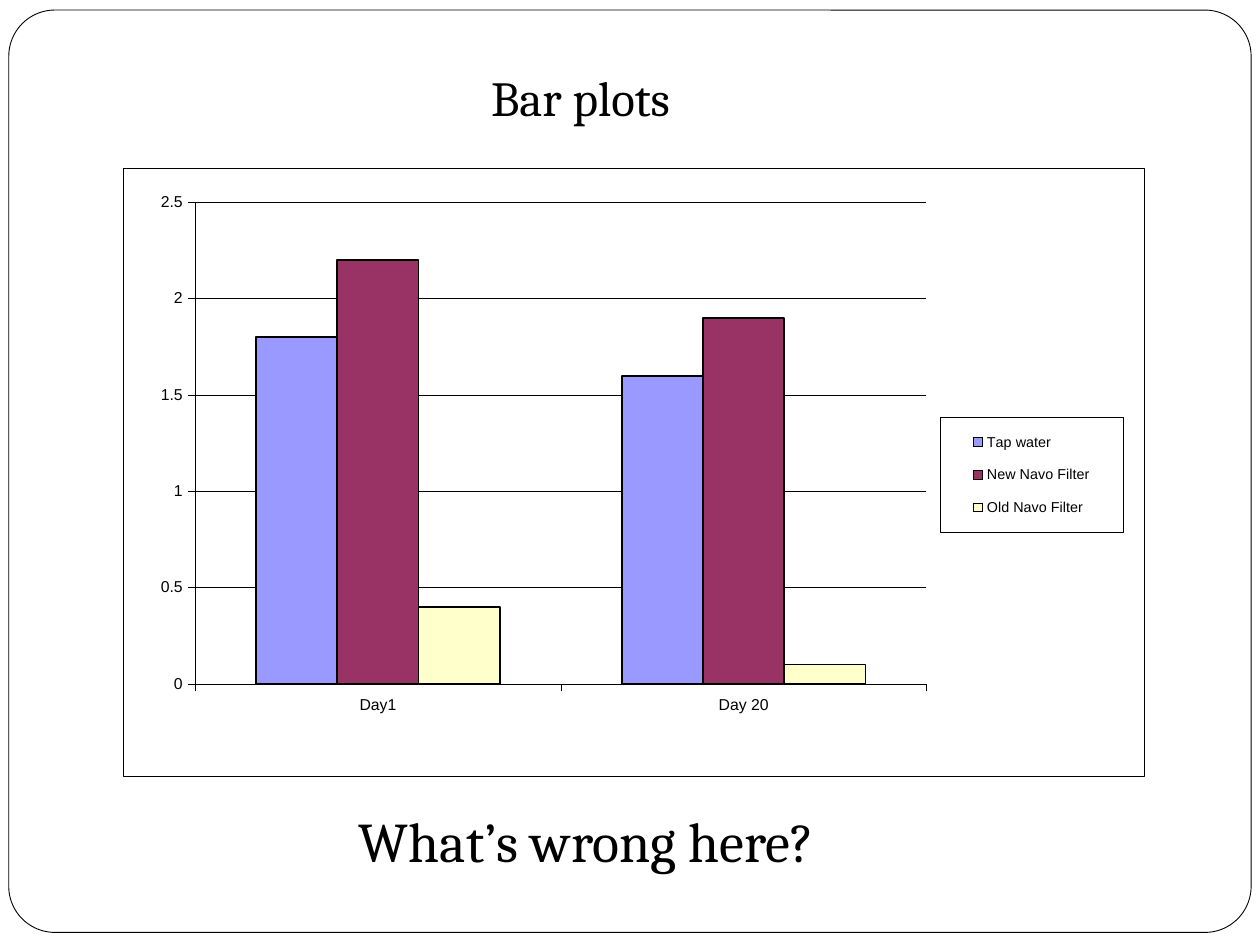
from lxml import etree
from pptx import Presentation
from pptx import util as u
from pptx.chart.data import CategoryChartData
from pptx.dml.color import RGBColor
from pptx.enum import chart as ch, shapes, text
from pptx.oxml import parse_xml
from pptx.oxml.ns import nsdecls, qn

COLORS = {
    "ink": "000000",
    "paper": "FFFFFF",
    "tap": "9999FF",
    "new": "993366",
    "old": "FFFFCC",
}
DAYS = ["Day1", "Day 20"]
WATERS = [
    ("Tap water", (1.8, 1.6), "tap"),
    ("New Navo Filter", (2.2, 1.9), "new"),
    ("Old Navo Filter", (0.4, 0.1), "old"),
]


def rgb(name):
    return RGBColor.from_string(COLORS[name])


def inches(box):
    return [u.Inches(length) for length in box]


def set_line(line, width):
    line.color.rgb = rgb("ink")
    line.width = u.Pt(width)


def set_font(font, size, name):
    font.size = u.Pt(size)
    font.name = name
    font.color.rgb = rgb("ink")


def add_text(slide, box, words, size, font="Cambria"):
    frame = slide.shapes.add_textbox(*inches(box)).text_frame
    frame.word_wrap = True
    frame.auto_size = text.MSO_AUTO_SIZE.SHAPE_TO_FIT_TEXT
    run = frame.paragraphs[0].add_run()
    run.text = words
    set_font(run.font, size, font)


def add_frame(slide, box):
    frame = slide.shapes.add_shape(
        shapes.MSO_SHAPE.ROUNDED_RECTANGLE, *inches(box))
    frame.shadow.inherit = False
    frame.adjustments[0] = 0.05
    frame.fill.solid()
    frame.fill.fore_color.rgb = rgb("paper")
    set_line(frame.line, 0.5)


def manual_layout(x, y, w, h, inner=False):
    """Return a c:layout element with fractions of the chart area."""
    layout = parse_xml(f"<c:layout {nsdecls('c')}><c:manualLayout/></c:layout>")
    settings = [("layoutTarget", "inner")] if inner else []
    settings += [("xMode", "edge"), ("yMode", "edge"),
                 ("x", x), ("y", y), ("w", w), ("h", h)]
    for tag, value in settings:
        etree.SubElement(layout[0], qn(f"c:{tag}")).set("val", str(value))
    return layout


def paper_box():
    """Return a c:spPr element with a white fill and a hairline border."""
    return parse_xml(
        f"<c:spPr {nsdecls('c', 'a')}>"
        f"<a:solidFill><a:srgbClr val='{COLORS['paper']}'/></a:solidFill>"
        f"<a:ln w='{u.Pt(0.25)}'><a:solidFill>"
        f"<a:srgbClr val='{COLORS['ink']}'/></a:solidFill></a:ln></c:spPr>")


def style_axes(chart):
    for axis in (chart.category_axis, chart.value_axis):
        axis.major_tick_mark = ch.XL_TICK_MARK.OUTSIDE
        axis.minor_tick_mark = ch.XL_TICK_MARK.NONE
        set_font(axis.tick_labels.font, 9, "Arial")
        set_line(axis.format.line, 0.25)
    chart.category_axis.tick_label_position = ch.XL_TICK_LABEL_POSITION.LOW
    values = chart.value_axis
    values.minimum_scale, values.maximum_scale, values.major_unit = 0, 2.5, 0.5
    values.has_major_gridlines = True
    set_line(values.major_gridlines.format.line, 0.25)
    values.tick_labels.number_format = "General"
    values.tick_labels.number_format_is_linked = False


def style_legend(chart):
    chart.has_legend = True
    legend = chart.legend
    legend.position = ch.XL_LEGEND_POSITION.RIGHT
    legend.include_in_layout = False
    set_font(legend.font, 8.2, "Arial")
    overlay = legend._element.find(qn("c:overlay"))
    for old in legend._element.findall(qn("c:layout")):
        legend._element.remove(old)
    overlay.addprevious(manual_layout(0.8, 0.41, 0.18, 0.19))
    overlay.addnext(paper_box())


def add_water_chart(slide, box):
    data = CategoryChartData()
    data.categories = DAYS
    for name, values, _ in WATERS:
        data.add_series(name, values)
    chart = slide.shapes.add_chart(
        ch.XL_CHART_TYPE.COLUMN_CLUSTERED, *inches(box), data).chart
    chart.has_title = False
    set_font(chart.font, 9, "Arial")

    plot = chart.plots[0]
    plot.gap_width, plot.overlap = 150, 0
    plot.vary_by_categories = False
    for series, (_, _, color) in zip(plot.series, WATERS):
        series.format.fill.solid()
        series.format.fill.fore_color.rgb = rgb(color)
        set_line(series.format.line, 1)

    style_axes(chart)
    style_legend(chart)
    chart_part = chart._chartSpace.find(qn("c:chart"))
    chart_part.addnext(paper_box())
    plot_area = chart_part.find(qn("c:plotArea"))
    for old in plot_area.findall(qn("c:layout")):
        plot_area.remove(old)
    plot_area.insert(0, manual_layout(0.07, 0.057, 0.717, 0.792, inner=True))


def main():
    deck = Presentation()
    deck.slide_width, deck.slide_height = u.Inches(10), u.Inches(7.5)
    slide = deck.slides.add_slide(deck.slide_layouts[6])
    add_frame(slide, (0.07, 0.08, 9.86, 7.32))
    add_water_chart(slide, (0.98, 1.33, 8.1, 4.83))
    add_text(slide, (3.8, 0.49, 1.77, 0.57), "Bar plots", 28)
    add_text(slide, (2.75, 6.35, 4.31, 0.64), "What’s wrong here?", 32)
    deck.save("out.pptx")


if __name__ == "__main__":
    main()
